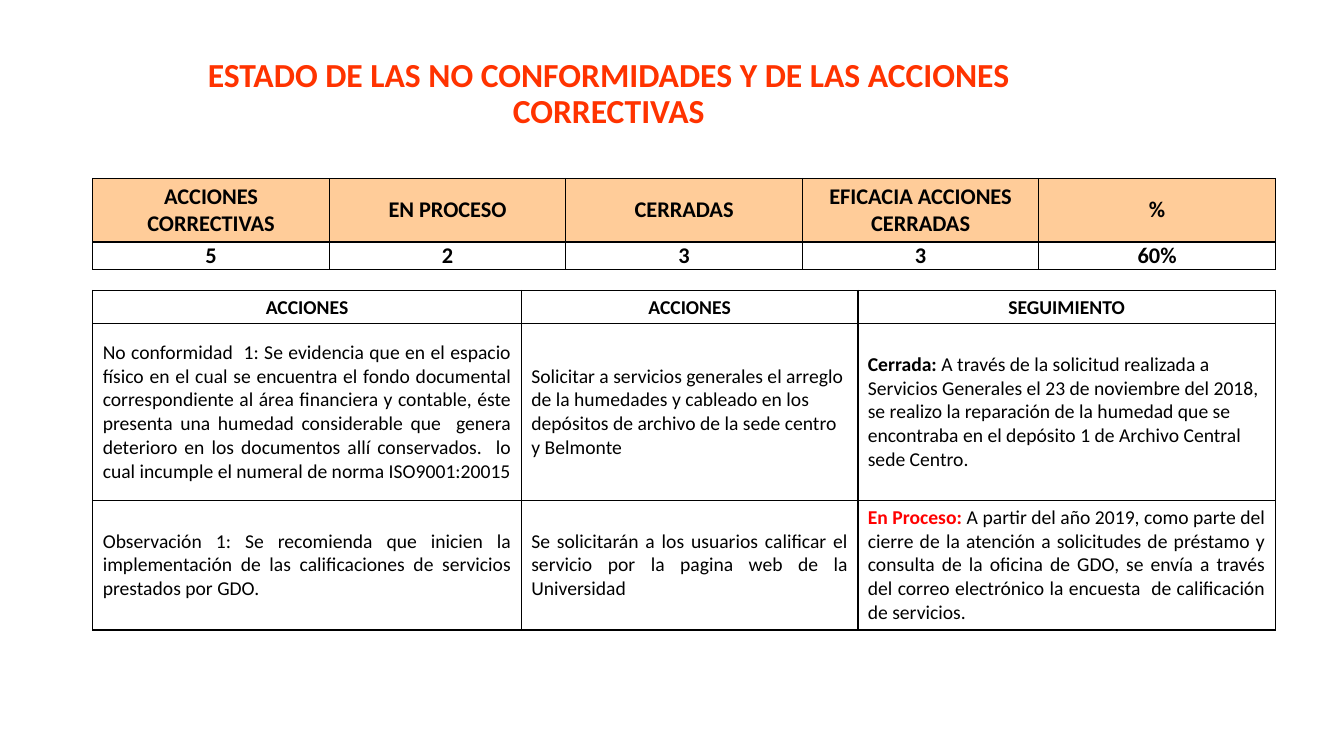
import dataclasses

import pptx
import pptx.dml.color
import pptx.enum.text
import pptx.oxml
import pptx.oxml.ns
import pptx.util

Cm = pptx.util.Cm
Pt = pptx.util.Pt
RGB = pptx.dml.color.RGBColor
ALIGN = pptx.enum.text.PP_ALIGN
ANCHOR = pptx.enum.text.MSO_ANCHOR


@dataclasses.dataclass(frozen=True)
class Theme:
    font: str = "Calibri"
    title: str = "FF3300"
    text: str = "000000"
    alert: str = "FF0000"
    header: str = "FFCC99"
    paper: str = "FFFFFF"
    title_size: int = 24
    summary_size: int = 16
    detail_size: int = 14


THEME = Theme()
LEFT = 2.34

SUMMARY = [
    ["ACCIONES\nCORRECTIVAS", "EN PROCESO", "CERRADAS",
     "EFICACIA ACCIONES CERRADAS", "%"],
    ["5", "2", "3", "3", "60%"],
]
DETAIL_HEADER = ["ACCIONES", "ACCIONES", "SEGUIMIENTO"]

# Each detail cell: alignment, bold lead, lead colour, body text
DETAILS = [
    [
        (ALIGN.JUSTIFY, "", THEME.text,
         "No conformidad  1: Se evidencia que en el espacio físico en el cual se "
         "encuentra el fondo documental correspondiente al área financiera y "
         "contable, éste presenta una humedad considerable que  genera deterioro "
         "en los documentos allí conservados.  lo cual incumple el numeral de "
         "norma ISO9001:20015"),
        (ALIGN.LEFT, "", THEME.text,
         "Solicitar a servicios generales el arreglo de la humedades y cableado "
         "en los depósitos de archivo de la sede centro y Belmonte"),
        (ALIGN.LEFT, "Cerrada: ", THEME.text,
         "A través de la solicitud realizada a Servicios Generales el 23 de "
         "noviembre del 2018, se realizo la reparación de la humedad que se "
         "encontraba en el depósito 1 de Archivo Central sede Centro."),
    ],
    [
        (ALIGN.JUSTIFY, "", THEME.text,
         "Observación 1: Se recomienda que inicien la implementación de las "
         "calificaciones de servicios prestados por GDO."),
        (ALIGN.JUSTIFY, "", THEME.text,
         "Se solicitarán a los usuarios calificar el servicio por la pagina web "
         "de la Universidad"),
        (ALIGN.JUSTIFY, "En Proceso: ", THEME.alert,
         "A partir del año 2019, como parte del cierre de la atención a "
         "solicitudes de préstamo y consulta de la oficina de GDO, se envía a "
         "través del correo electrónico la encuesta  de calificación de "
         "servicios."),
    ],
]


def add_run(p, text, size, color=THEME.text, bold=False):
    """Add text to a paragraph, with a line break at each newline."""
    for i, line in enumerate(text.split("\n")):
        if i:
            p.add_line_break()
        r = p.add_run()
        r.text = line
        r.font.name = THEME.font
        r.font.size = Pt(size)
        r.font.bold = bold
        r.font.color.rgb = RGB.from_string(color)


def add_title(s, text):
    sp = s.shapes.title
    sp.left, sp.top, sp.width, sp.height = Cm(2.82), Cm(1.83), Cm(25.04), Cm(1.6)
    tf = sp.text_frame
    tf.word_wrap = True
    tf.auto_size = pptx.enum.text.MSO_AUTO_SIZE.NONE
    tf.vertical_anchor = ANCHOR.BOTTOM
    p = tf.paragraphs[0]
    p.alignment = ALIGN.CENTER
    p.line_spacing = 0.9
    add_run(p, text, THEME.title_size, THEME.title, True)


def add_grid(s, top, widths, heights):
    """Add an unstyled table and return it."""
    frame = s.shapes.add_table(len(heights), len(widths), Cm(LEFT), Cm(top),
                               Cm(sum(widths)), Cm(sum(heights)))
    table = frame.table
    table.first_row = table.horz_banding = False
    for column, width in zip(table.columns, widths):
        column.width = Cm(width)
    for row, height in zip(table.rows, heights):
        row.height = Cm(height)
    return table


def format_cell(cell, fill, align, side=0.25, edge=0.13, anchor=ANCHOR.MIDDLE):
    """Border, fill and align a cell; return its paragraph."""
    tc_pr = cell._tc.get_or_add_tcPr()
    for name in ("lnL", "lnR", "lnT", "lnB"):
        tc_pr.append(pptx.oxml.parse_xml(
            f'<a:{name} {pptx.oxml.ns.nsdecls("a")} w="{Pt(1)}"><a:solidFill>'
            f'<a:srgbClr val="{THEME.text}"/></a:solidFill></a:{name}>'))
    cell.fill.solid()
    cell.fill.fore_color.rgb = RGB.from_string(fill)
    cell.margin_left = cell.margin_right = Cm(side)
    cell.margin_top = cell.margin_bottom = Cm(edge)
    cell.vertical_anchor = anchor
    p = cell.text_frame.paragraphs[0]
    p.alignment = align
    return p


def add_details(s):
    table = add_grid(s, 7.32, [10.8, 8.48, 10.52], [0.84, 4.45, 3.25])
    for col, text in enumerate(DETAIL_HEADER):
        p = format_cell(table.cell(0, col), THEME.paper, ALIGN.CENTER, 0.1, 0)
        p.line_spacing = 1.07
        add_run(p, text, THEME.detail_size, bold=True)
    for row, cells in enumerate(DETAILS, 1):
        for col, (align, lead, color, body) in enumerate(cells):
            p = format_cell(table.cell(row, col), THEME.paper, align)
            if lead:
                add_run(p, lead, THEME.detail_size, color, True)
            add_run(p, body, THEME.detail_size)


def add_summary(s):
    table = add_grid(s, 4.5, [5.96] * 5, [1.6, 0.68])
    for row, texts in enumerate(SUMMARY):
        fill = THEME.paper if row else THEME.header
        for col, text in enumerate(texts):
            anchor = ANCHOR.BOTTOM if text == "60%" else ANCHOR.MIDDLE
            p = format_cell(table.cell(row, col), fill, ALIGN.CENTER, 0, 0, anchor)
            add_run(p, text, THEME.summary_size, bold=True)


def main():
    prs = pptx.Presentation()
    prs.slide_width, prs.slide_height = Cm(33.87), Cm(19.05)
    s = prs.slides.add_slide(prs.slide_layouts[5])  # title only
    add_details(s)
    add_title(s, "ESTADO DE LAS NO CONFORMIDADES Y DE LAS ACCIONES CORRECTIVAS")
    add_summary(s)
    prs.save("out.pptx")


if __name__ == "__main__":
    main()
